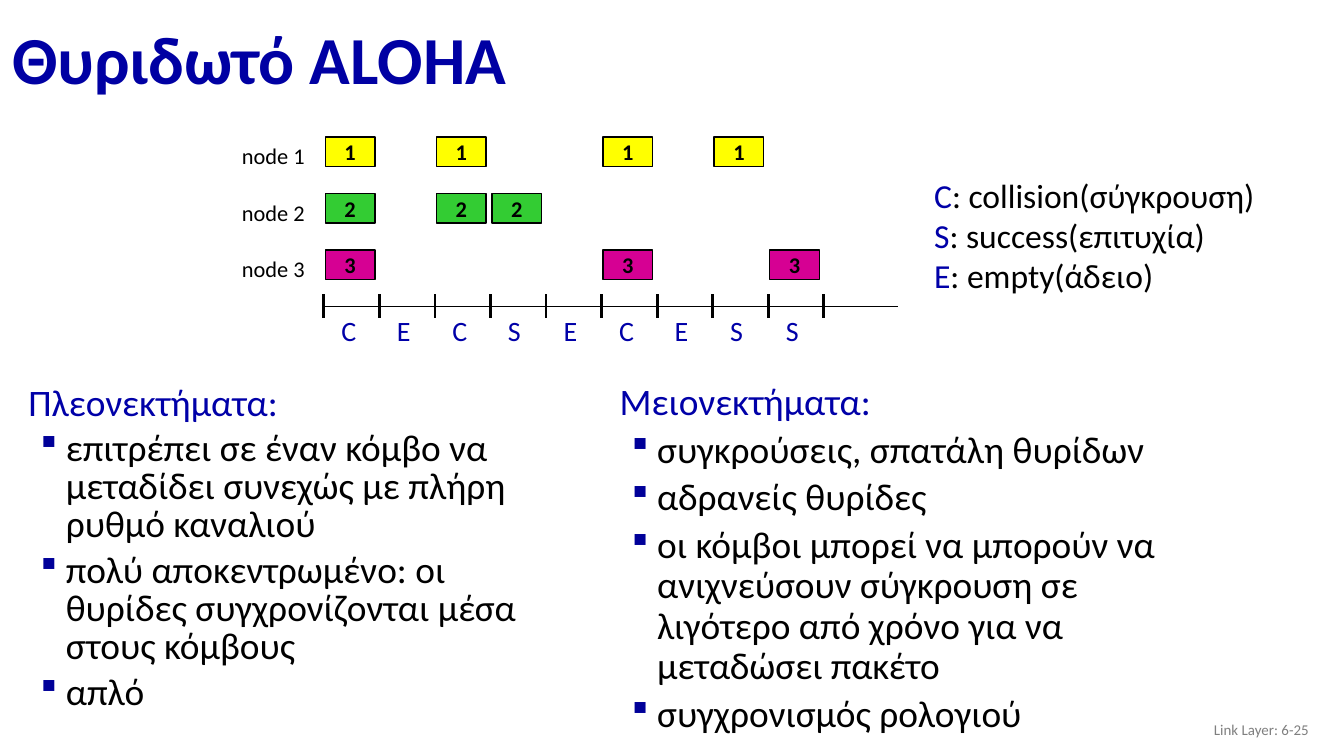
import pptx
import pptx.util
import pptx.dml.color
import pptx.enum.shapes
import pptx.enum.text
import pptx.oxml.ns
import lxml.etree

Inches = pptx.util.Inches
Pt = pptx.util.Pt
RGBColor = pptx.dml.color.RGBColor
ALIGN = pptx.enum.text.PP_ALIGN
ANCHOR = pptx.enum.text.MSO_ANCHOR
qn = pptx.oxml.ns.qn

TITLE_BLUE = RGBColor(0x00, 0x00, 0xA3)
BLUE = RGBColor(0x00, 0x00, 0xA8)
BULLET_BLUE = RGBColor(0x00, 0x00, 0x99)
BLACK = RGBColor(0x00, 0x00, 0x00)
GRAY = RGBColor(0x7F, 0x7F, 0x7F)
YELLOW = RGBColor(0xFF, 0xFF, 0x00)
GREEN = RGBColor(0x33, 0xCC, 0x33)
MAGENTA = RGBColor(0xD6, 0x00, 0x93)

NODES = [
    ("1", YELLOW, [0, 2, 5, 7]),
    ("2", GREEN, [0, 2, 3]),
    ("3", MAGENTA, [0, 5, 8]),
]
OUTCOMES = "CECSECESS"
LEGEND = [
    ("C", ": collision(σύγκρουση)"),
    ("S", ": success(επιτυχία)"),
    ("E", ": empty(άδειο)"),
]
PROS = [
    "επιτρέπει σε έναν κόμβο να μεταδίδει συνεχώς με πλήρη ρυθμό καναλιού",
    "πολύ αποκεντρωμένο: οι θυρίδες συγχρονίζονται μέσα στους κόμβους",
    "απλό",
]
CONS = [
    "συγκρούσεις, σπατάλη θυρίδων",
    "αδρανείς θυρίδες",
    "οι κόμβοι μπορεί να μπορούν να ανιχνεύσουν σύγκρουση σε "
    "λιγότερο από χρόνο για να μεταδώσει πακέτο",
    "συγχρονισμός ρολογιού",
]


def add_run(p, text, size, color, bold=False):
    r = p.add_run()
    r.text = text
    font = {"name": "Calibri", "size": Pt(size), "bold": bold}
    for key, value in font.items():
        setattr(r.font, key, value)
    r.font.color.rgb = color


def add_box(s, x, y, w, h, **options):
    tf = s.shapes.add_textbox(Inches(x), Inches(y), Inches(w), Inches(h)).text_frame
    layout = {
        "word_wrap": True,
        "margin_left": Inches(0.07),
        "margin_right": Inches(0.07),
        "margin_top": Inches(0.04),
        "margin_bottom": Inches(0.04),
        **options,
    }
    for key, value in layout.items():
        setattr(tf, key, value)
    return tf


def add_line(s, x1, y1, x2, y2, width):
    line = s.shapes.add_connector(
        pptx.enum.shapes.MSO_CONNECTOR.STRAIGHT,
        Inches(x1), Inches(y1), Inches(x2), Inches(y2))
    line.line.color.rgb = BLACK
    line.line.width = Pt(width)
    lxml.etree.SubElement(line._element.spPr, qn("a:effectLst"))


def add_packet(s, x, y, label, color):
    sp = s.shapes.add_shape(
        pptx.enum.shapes.MSO_SHAPE.RECTANGLE,
        Inches(x), Inches(y), Inches(0.37), Inches(0.22))
    sp.shadow.inherit = False
    sp.fill.solid()
    sp.fill.fore_color.rgb = color
    sp.line.color.rgb = BLACK
    sp.line.width = Pt(0.75)
    tf = sp.text_frame
    for side in ("left", "right", "top", "bottom"):
        setattr(tf, f"margin_{side}", 0)
    tf.vertical_anchor = ANCHOR.MIDDLE
    p = tf.paragraphs[0]
    p.alignment = ALIGN.CENTER
    add_run(p, label, 12, BLACK, True)


def add_title(s, x, y, w, h):
    p = add_box(s, x, y, w, h, vertical_anchor=ANCHOR.MIDDLE).paragraphs[0]
    p.line_spacing = 0.9
    add_run(p, "Θυριδωτό ALOHA", 36, TITLE_BLUE, True)


def add_footer(s, x, y, w, h):
    p = add_box(s, x, y, w, h, vertical_anchor=ANCHOR.MIDDLE).paragraphs[0]
    p.alignment = ALIGN.RIGHT
    add_run(p, "Link Layer: 6-25", 8, GRAY)


def add_timeline(s, x, y, w, h):
    axis_x = x + 0.68
    axis_y = y + h - 0.34
    slot = 3.72 / len(OUTCOMES)
    for row, (label, color, slots) in enumerate(NODES):
        row_y = y + 0.42 * row
        for i in slots:
            add_packet(s, axis_x + slot * i + 0.01, row_y, label, color)
        tf = add_box(s, x, row_y, 0.62, 0.28, word_wrap=False)
        add_run(tf.paragraphs[0], f"node {label}", 12, BLACK)
    add_line(s, axis_x, axis_y, x + w, axis_y, 0.75)
    for i in range(len(OUTCOMES) + 1):
        tick_x = axis_x + slot * i
        add_line(s, tick_x, axis_y - 0.09, tick_x, axis_y + 0.09, 1.5)
    for i, outcome in enumerate(OUTCOMES):
        tf = add_box(s, axis_x + slot * i + 0.06, axis_y + 0.01, 0.26, 0.33,
                     word_wrap=False)
        add_run(tf.paragraphs[0], outcome, 15, BLUE)


def add_legend(s, x, y, w, h):
    tf = add_box(s, x, y, w, h)
    for i, (letter, meaning) in enumerate(LEGEND):
        p = tf.add_paragraph() if i else tf.paragraphs[0]
        add_run(p, letter, 18, BLUE)
        add_run(p, meaning, 18, BLACK)


def add_column(s, x, y, w, h, heading, items, spacing):
    tf = add_box(s, x, y, w, h)
    p = tf.paragraphs[0]
    p.line_spacing = spacing
    add_run(p, heading, 20, BLUE)
    for item in items:
        p = tf.add_paragraph()
        p.line_spacing = spacing
        p.space_before = Pt(4)
        add_run(p, item, 20, BLACK)
        pPr = p._p.get_or_add_pPr()
        pPr.set("marL", str(Inches(0.28)))
        pPr.set("indent", str(Inches(-0.19)))
        clr = lxml.etree.SubElement(pPr, qn("a:buClr"))
        lxml.etree.SubElement(clr, qn("a:srgbClr"), val=str(BULLET_BLUE))
        lxml.etree.SubElement(pPr, qn("a:buFont"), typeface="Wingdings", charset="2")
        lxml.etree.SubElement(pPr, qn("a:buChar"), char="§")


def main():
    prs = pptx.Presentation()
    prs.slide_width = Inches(10)
    prs.slide_height = prs.slide_width * 9 // 16
    s = prs.slides.add_slide(prs.slide_layouts[6])
    add_title(s, 0.02, 0.1, 8.62, 0.73)
    add_footer(s, 7.56, 5.28, 2.25, 0.3)
    add_column(s, 0.14, 2.83, 3.98, 2.63, "Πλεονεκτήματα:", PROS, 0.85)
    add_column(s, 4.54, 2.81, 4.58, 2.25, "Μειονεκτήματα:", CONS, 0.9)
    add_timeline(s, 1.73, 1.02, 4.95, 1.6)
    add_legend(s, 6.88, 1.26, 2.68, 0.98)
    prs.save("out.pptx")


if __name__ == "__main__":
    main()
